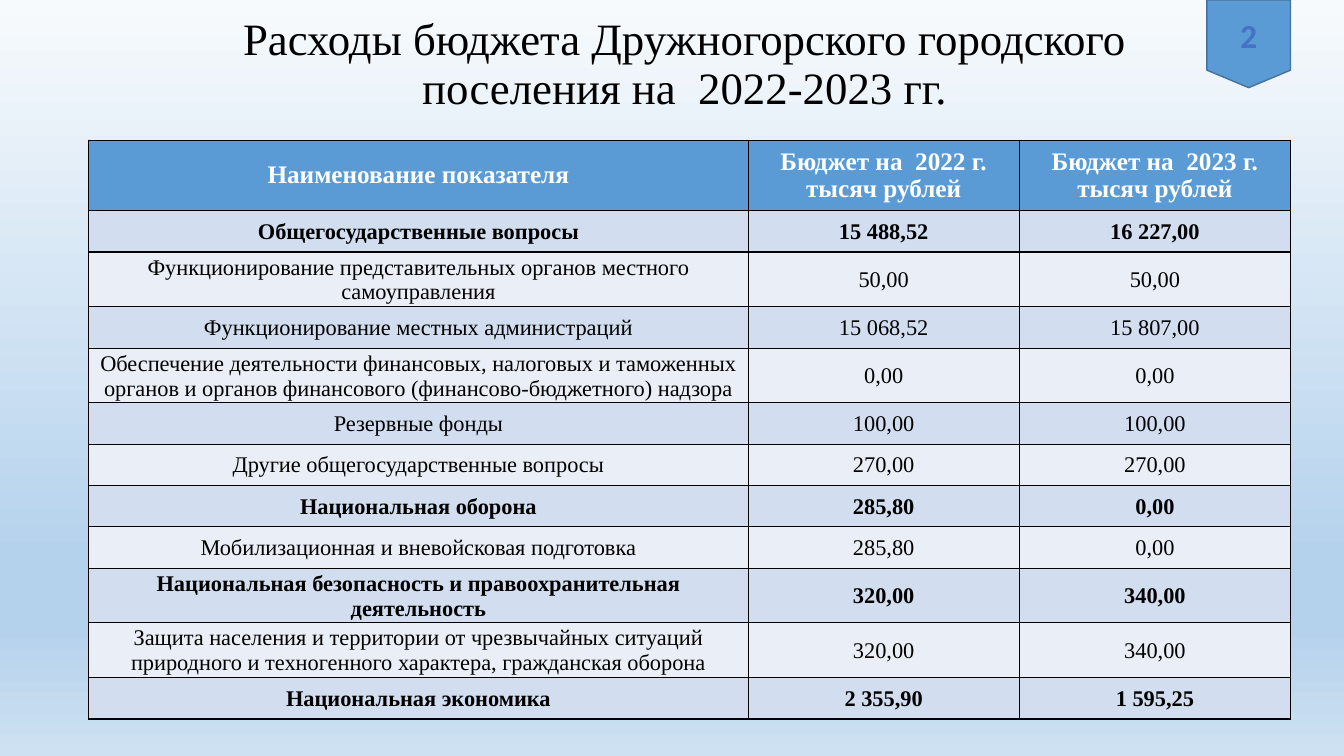
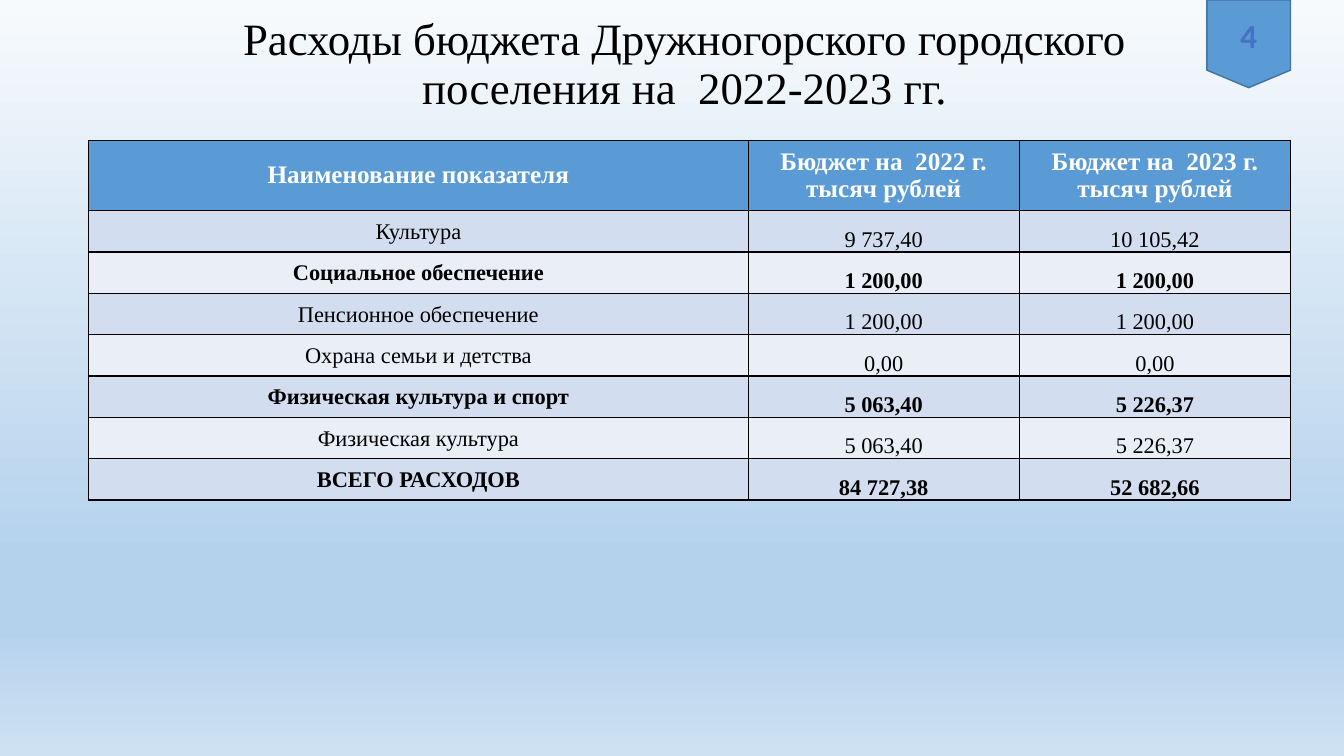
import pptx
import pptx.dml.color
import pptx.enum.shapes
import pptx.enum.text
import pptx.oxml
import pptx.oxml.ns
import pptx.util

RGBColor = pptx.dml.color.RGBColor
ANCHOR = pptx.enum.text.MSO_ANCHOR
Inches = pptx.util.Inches

BLACK = RGBColor(0x00, 0x00, 0x00)
WHITE = RGBColor(0xFF, 0xFF, 0xFF)
BLUE = RGBColor(0x5B, 0x9B, 0xD5)
DARK_BLUE = RGBColor(0x43, 0x73, 0x9E)
NUMBER_BLUE = RGBColor(0x44, 0x72, 0xC4)
BAND_FILLS = (RGBColor(0xD2, 0xDE, 0xEF), RGBColor(0xEA, 0xEF, 0xF7))
BACKGROUND_STOPS = (
    (0, RGBColor(0xF7, 0xFA, 0xFD)),
    (74, RGBColor(0xB5, 0xD2, 0xEC)),
    (83, RGBColor(0xB5, 0xD2, 0xEC)),
    (100, RGBColor(0xCE, 0xE1, 0xF2)),
)

SERIF = "Times New Roman"
SLIDE_WIDTH, SLIDE_HEIGHT = 13.33, 7.5
TABLE_LEFT, TABLE_TOP = 0.88, 1.39
COLUMN_WIDTHS = (6.54, 2.69, 2.69)
HEADER_HEIGHT, ROW_HEIGHT = 0.4, 0.41
CELL_MARGINS = (0.01, 0.01, 0.01, 0)
HEADER_MARGINS = (0.1, 0.05, 0.1, 0.05)

TITLE = "Расходы бюджета Дружногорского городского поселения на  2022-2023 гг."
HEADER = (
    "Наименование показателя",
    "Бюджет на  2022 г.\nтысяч рублей",
    "Бюджет на  2023 г.\nтысяч рублей",
)

# Each row: name, 2022, 2023, whether it is a section total
GENERAL_ROWS = (
    ("Общегосударственные вопросы", "15 488,52", "16 227,00", True),
    ("Функционирование представительных органов местного самоуправления",
     "50,00", "50,00", False),
    ("Функционирование местных администраций", "15 068,52", "15 807,00", False),
    ("Обеспечение деятельности финансовых, налоговых и таможенных органов "
     "и органов финансового (финансово-бюджетного) надзора",
     "0,00", "0,00", False),
    ("Резервные фонды", "100,00", "100,00", False),
    ("Другие общегосударственные вопросы", "270,00", "270,00", False),
    ("Национальная оборона", "285,80", "0,00", True),
    ("Мобилизационная и вневойсковая подготовка", "285,80", "0,00", False),
    ("Национальная безопасность и правоохранительная деятельность",
     "320,00", "340,00", True),
    ("Защита населения и территории от чрезвычайных ситуаций природного "
     "и техногенного характера, гражданская оборона",
     "320,00", "340,00", False),
    ("Национальная экономика", "2 355,90", "1 595,25", True),
)
SOCIAL_ROWS = (
    ("Культура", "9 737,40", "10 105,42", False),
    ("Социальное обеспечение", "1 200,00", "1 200,00", True),
    ("Пенсионное обеспечение", "1 200,00", "1 200,00", False),
    ("Охрана семьи и детства", "0,00", "0,00", False),
    ("Физическая культура и спорт", "5 063,40", "5 226,37", True),
    ("Физическая культура", "5 063,40", "5 226,37", False),
    ("ВСЕГО РАСХОДОВ", "84 727,38", "52 682,66", True),
)


def write_text(text_frame, text, size, color=BLACK, font=SERIF, bold=False,
               line_spacing=None):
    """Write centred text, one paragraph for each line."""
    for index, line in enumerate(text.split("\n")):
        paragraph = text_frame.add_paragraph() if index else text_frame.paragraphs[0]
        paragraph.alignment = pptx.enum.text.PP_ALIGN.CENTER
        paragraph.line_spacing = line_spacing
        run = paragraph.add_run()
        run.text = line
        run.font.size = pptx.util.Pt(size)
        run.font.name = font
        run.font.bold = bold
        run.font.color.rgb = color


def set_background(master):
    fill = master.background.fill
    fill.gradient()
    fill.gradient_angle = 270
    stop_list = next(master.element.iter(pptx.oxml.ns.qn("a:gsLst")))
    for stop in list(stop_list):
        stop_list.remove(stop)
    for percent, color in BACKGROUND_STOPS:
        stop_list.append(pptx.oxml.parse_xml(
            f'<a:gs {pptx.oxml.ns.nsdecls("a")} pos="{percent * 1000}">'
            f'<a:srgbClr val="{color}"/></a:gs>'))


def add_title(slide):
    box = slide.shapes.add_textbox(
        Inches(1.75), 0, Inches(10.08), Inches(1.18))
    box.text_frame.word_wrap = True
    box.text_frame.vertical_anchor = ANCHOR.BOTTOM
    write_text(box.text_frame, TITLE, 32, line_spacing=0.9)


def add_number_badge(slide, number):
    badge = slide.shapes.add_shape(
        pptx.enum.shapes.MSO_SHAPE.FLOWCHART_OFFPAGE_CONNECTOR,
        Inches(11.97), 0, Inches(0.83), Inches(0.87))
    badge.shadow.inherit = False
    badge.fill.solid()
    badge.fill.fore_color.rgb = BLUE
    badge.line.color.rgb = DARK_BLUE
    badge.line.width = pptx.util.Pt(1)
    badge.text_frame.vertical_anchor = ANCHOR.MIDDLE
    write_text(badge.text_frame, str(number), 24, color=NUMBER_BLUE,
               font="Calibri", bold=True)


def add_borders(cell):
    properties = cell._tc.get_or_add_tcPr()
    for side in ("lnL", "lnR", "lnT", "lnB"):
        properties.append(pptx.oxml.parse_xml(
            f'<a:{side} {pptx.oxml.ns.nsdecls("a")} w="{pptx.util.Pt(1)}">'
            f'<a:solidFill><a:srgbClr val="{BLACK}"/></a:solidFill></a:{side}>'))


def fill_cell(cell, text, fill, margins, anchor, **text_format):
    add_borders(cell)
    cell.fill.solid()
    cell.fill.fore_color.rgb = fill
    (cell.margin_left, cell.margin_top,
     cell.margin_right, cell.margin_bottom) = map(Inches, margins)
    cell.vertical_anchor = anchor
    write_text(cell.text_frame, text, **text_format)


def add_budget_table(slide, rows, amount_anchor):
    table = slide.shapes.add_table(
        len(rows) + 1, len(COLUMN_WIDTHS), Inches(TABLE_LEFT), Inches(TABLE_TOP),
        Inches(sum(COLUMN_WIDTHS)),
        Inches(HEADER_HEIGHT + ROW_HEIGHT * len(rows))).table
    for column, width in zip(table.columns, COLUMN_WIDTHS):
        column.width = Inches(width)
    for index, row in enumerate(table.rows):
        row.height = Inches(ROW_HEIGHT if index else HEADER_HEIGHT)

    for column, text in enumerate(HEADER):
        fill_cell(table.cell(0, column), text, BLUE, HEADER_MARGINS,
                  ANCHOR.MIDDLE, size=18, color=WHITE, bold=True)
    for index, (*texts, is_total) in enumerate(rows):
        for column, text in enumerate(texts):
            fill_cell(table.cell(index + 1, column), text, BAND_FILLS[index % 2],
                      CELL_MARGINS, amount_anchor if column else ANCHOR.MIDDLE,
                      size=16, bold=is_total)


def add_budget_slide(presentation, number, rows, amount_anchor):
    slide = presentation.slides.add_slide(presentation.slide_layouts[6])
    add_title(slide)
    add_budget_table(slide, rows, amount_anchor)
    add_number_badge(slide, number)


def main():
    presentation = pptx.Presentation()
    presentation.slide_width = Inches(SLIDE_WIDTH)
    presentation.slide_height = Inches(SLIDE_HEIGHT)
    set_background(presentation.slide_master)
    add_budget_slide(presentation, 2, GENERAL_ROWS, ANCHOR.MIDDLE)
    add_budget_slide(presentation, 4, SOCIAL_ROWS, ANCHOR.BOTTOM)
    presentation.save("out.pptx")


if __name__ == "__main__":
    main()
